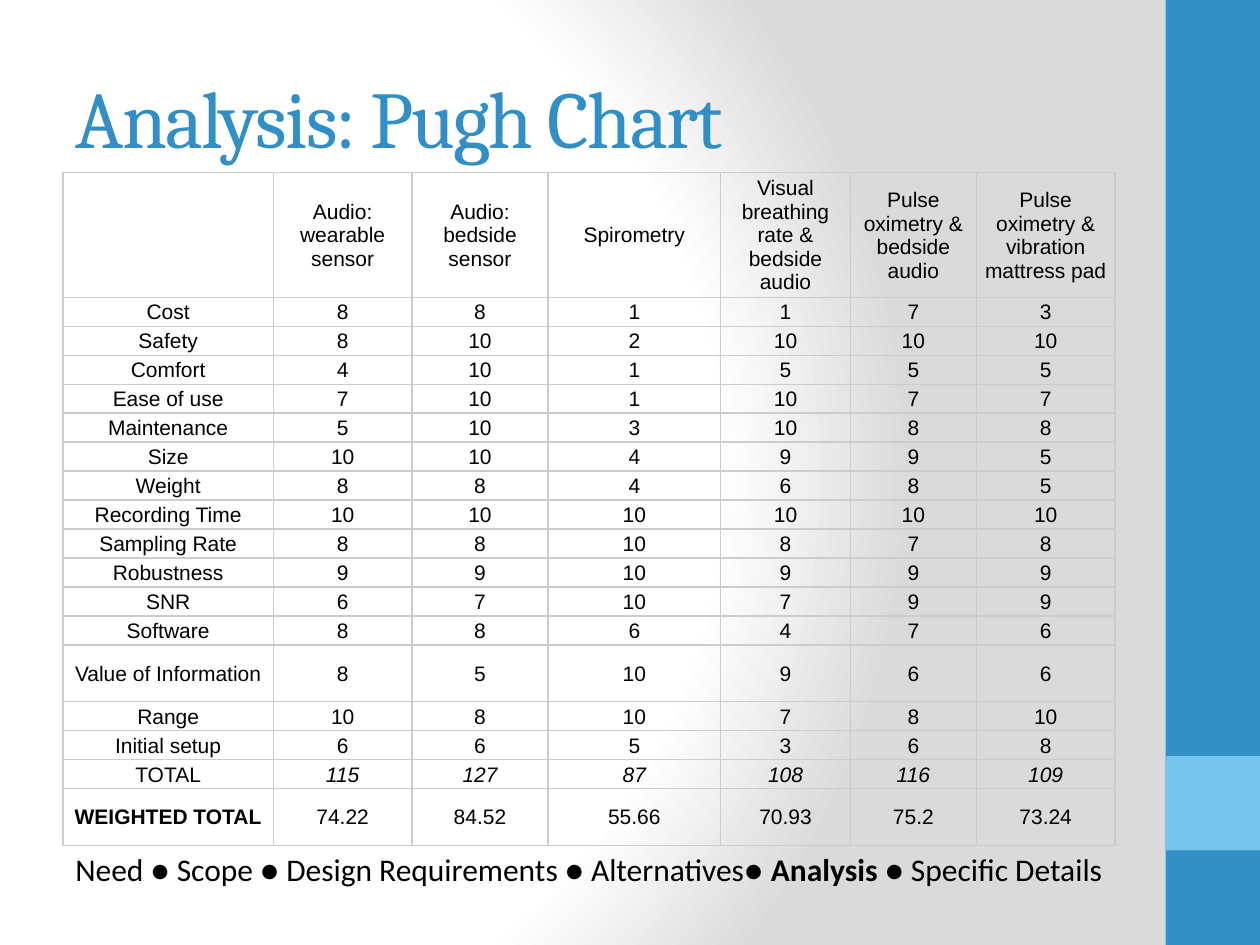
from dataclasses import dataclass

from pptx import Presentation
from pptx.dml.color import RGBColor
from pptx.enum.shapes import MSO_SHAPE as Shape
from pptx.enum.text import MSO_ANCHOR as Anchor, MSO_AUTO_SIZE as AutoSize, PP_ALIGN as Align
from pptx.oxml import parse_xml
from pptx.oxml.ns import nsdecls
from pptx.util import Inches, Pt


@dataclass(frozen=True)
class Theme:
    blue: str = "318FC5"
    light_blue: str = "76C5EF"
    text: str = "000000"
    border: str = "CCCCCC"
    white: str = "FFFFFF"
    grey: str = "DADADA"
    title_size: int = 46
    table_size: int = 12
    trail_size: int = 18
    title_font: str = "Cambria"
    table_font: str = "Arial"
    trail_font: str = "Calibri"


THEME = Theme()
COLUMN_WIDTHS = [1.67, 1.1, 1.08, 1.37, 1.03, 1, 1.1]
HEADER_HEIGHT, ROW_HEIGHT, TALL_HEIGHT = 0.99, 0.23, 0.45
TALL_ROWS = {"Value of Information", "WEIGHTED TOTAL"}
HEADERS = ["", "Audio: wearable sensor", "Audio: bedside sensor", "Spirometry",
           "Visual breathing rate & bedside audio", "Pulse oximetry & bedside audio",
           "Pulse oximetry & vibration mattress pad"]
SCORES = [
    ("Cost", 8, 8, 1, 1, 7, 3),
    ("Safety", 8, 10, 2, 10, 10, 10),
    ("Comfort", 4, 10, 1, 5, 5, 5),
    ("Ease of use", 7, 10, 1, 10, 7, 7),
    ("Maintenance", 5, 10, 3, 10, 8, 8),
    ("Size", 10, 10, 4, 9, 9, 5),
    ("Weight", 8, 8, 4, 6, 8, 5),
    ("Recording Time", 10, 10, 10, 10, 10, 10),
    ("Sampling Rate", 8, 8, 10, 8, 7, 8),
    ("Robustness", 9, 9, 10, 9, 9, 9),
    ("SNR", 6, 7, 10, 7, 9, 9),
    ("Software", 8, 8, 6, 4, 7, 6),
    ("Value of Information", 8, 5, 10, 9, 6, 6),
    ("Range", 10, 8, 10, 7, 8, 10),
    ("Initial setup", 6, 6, 5, 3, 6, 8),
    ("TOTAL", 115, 127, 87, 108, 116, 109),
    ("WEIGHTED TOTAL", 74.22, 84.52, 55.66, 70.93, 75.2, 73.24),
]


def set_attributes(target, values):
    for name, value in values.items():
        setattr(target, name, value)


def format_font(font, name, size, color, **styles):
    set_attributes(font, {"name": name, "size": Pt(size), **styles})
    font.color.rgb = RGBColor.from_string(color)


def set_background(slide):
    stops = [(0, THEME.white), (75, THEME.white), (100, THEME.grey)]
    stop_xml = "".join(
        f'<a:gs pos="{position * 1000}"><a:srgbClr val="{color}"/></a:gs>'
        for position, color in stops)
    background = parse_xml(
        f'<p:bg {nsdecls("p", "a")}><p:bgPr><a:gradFill rotWithShape="1">'
        f'<a:gsLst>{stop_xml}</a:gsLst><a:path path="circle">'
        '<a:fillToRect l="20000" t="50000" r="100000" b="50000"/></a:path>'
        '</a:gradFill><a:effectLst/></p:bgPr></p:bg>')
    slide.element.cSld.insert(0, background)


def add_band(slide, top, height, color):
    band = slide.shapes.add_shape(
        Shape.RECTANGLE, Inches(9.25), Inches(top), Inches(0.75), Inches(height))
    band.shadow.inherit = False
    band.fill.solid()
    band.fill.fore_color.rgb = RGBColor.from_string(color)
    band.line.fill.background()


def set_title(slide, text):
    title = slide.shapes.title
    set_attributes(title, {"left": Inches(0.5), "top": Inches(0.3),
                           "width": Inches(8.33), "height": Inches(1.25)})
    frame = title.text_frame
    set_attributes(frame, {"text": text, "word_wrap": True, "auto_size": AutoSize.NONE,
                           "vertical_anchor": Anchor.MIDDLE})
    paragraph = frame.paragraphs[0]
    paragraph.alignment = Align.LEFT
    font = paragraph.runs[0].font
    format_font(font, THEME.title_font, THEME.title_size, THEME.blue)
    paragraph.runs[0]._r.get_or_add_rPr().set("spc", "-100")


def add_borders(cell):
    properties = cell._tc.get_or_add_tcPr()
    for side in ("lnL", "lnR", "lnT", "lnB"):
        properties.append(parse_xml(
            f'<a:{side} {nsdecls("a")} w="{Pt(1)}"><a:solidFill>'
            f'<a:srgbClr val="{THEME.border}"/></a:solidFill></a:{side}>'))


def fill_cell(cell, text, **styles):
    add_borders(cell)
    cell.fill.background()
    set_attributes(cell, {"vertical_anchor": Anchor.MIDDLE, "margin_left": Inches(0.01),
                          "margin_right": Inches(0.01), "margin_top": Inches(0.01),
                          "margin_bottom": 0, "text": text})
    paragraph = cell.text_frame.paragraphs[0]
    paragraph.alignment = Align.CENTER
    format_font(paragraph.font, THEME.table_font, THEME.table_size, THEME.text)
    for run in paragraph.runs:
        format_font(run.font, THEME.table_font, THEME.table_size, THEME.text, **styles)


def add_score_table(slide):
    rows = [HEADERS, *SCORES]
    heights = [HEADER_HEIGHT] + [
        TALL_HEIGHT if label in TALL_ROWS else ROW_HEIGHT for label, *_ in SCORES]
    table = slide.shapes.add_table(
        len(rows), len(HEADERS), Inches(0.5), Inches(1.37),
        Inches(sum(COLUMN_WIDTHS)), Inches(sum(heights))).table
    set_attributes(table, {"first_row": False, "horz_banding": False})
    for column, width in zip(table.columns, COLUMN_WIDTHS):
        column.width = Inches(width)
    for row, height, values in zip(table.rows, heights, rows):
        row.height = Inches(height)
        label = values[0]
        for index, (cell, value) in enumerate(zip(row.cells, values)):
            fill_cell(cell, str(value),
                      bold=label == "WEIGHTED TOTAL" and index == 0,
                      italic=label == "TOTAL" and index > 0)


def add_trail(slide, parts):
    box = slide.shapes.add_textbox(Inches(0.5), Inches(6.7), Inches(8.75), Inches(0.4))
    set_attributes(box.text_frame, {"word_wrap": True,
                                    "auto_size": AutoSize.SHAPE_TO_FIT_TEXT})
    paragraph = box.text_frame.paragraphs[0]
    for text, bold in parts:
        run = paragraph.add_run()
        run.text = text
        format_font(run.font, THEME.trail_font, THEME.trail_size, THEME.text, bold=bold)


def main():
    presentation = Presentation()
    set_attributes(presentation, {"slide_width": Inches(10), "slide_height": Inches(7.5)})
    slide = presentation.slides.add_slide(presentation.slide_layouts[5])
    set_background(slide)
    add_band(slide, 0, 7.5, THEME.blue)
    add_band(slide, 6, 0.75, THEME.light_blue)
    set_title(slide, "Analysis: Pugh Chart")
    add_score_table(slide)
    add_trail(slide, [("Need ● Scope ● Design Requirements ● Alternatives● ", False),
                      ("Analysis", True), (" ● Specific Details", False)])
    presentation.save("out.pptx")


if __name__ == "__main__":
    main()
